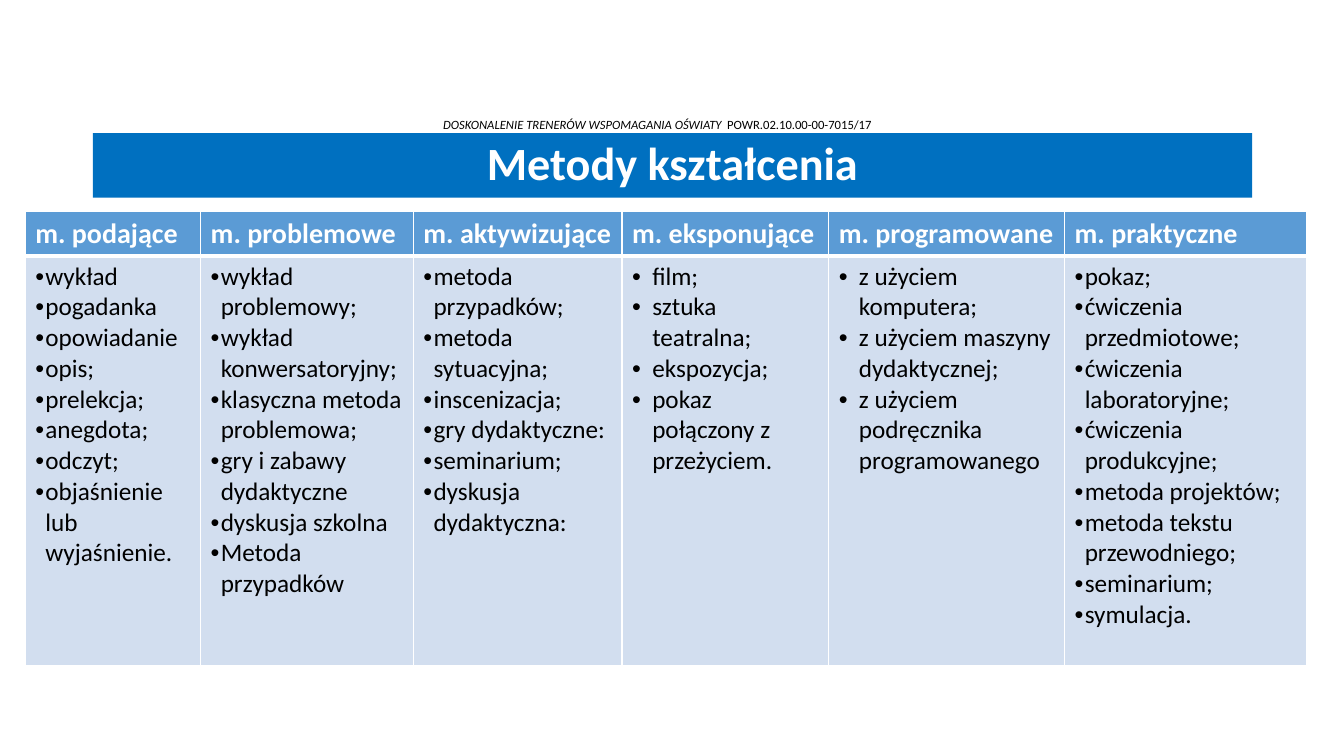
from lxml import etree
from pptx import Presentation
from pptx.dml.color import RGBColor
from pptx.enum import text as tx
from pptx.oxml.ns import qn
from pptx.util import Inches, Pt

# Content
TITLE = "Metody kształcenia"
PROJECT = [("DOSKONALENIE TRENERÓW WSPOMAGANIA OŚWIATY  ", True),
           ("POWR.02.10.00-00-7015/17", False)]
# Heading, column width, bullet indent, methods
METHODS = [
    ("m. podające", 1.74, 0.1,
     ["wykład", "pogadanka", "opowiadanie", "opis;", "prelekcja;",
      "anegdota;", "odczyt;", "objaśnienie lub wyjaśnienie."]),
    ("m. problemowe", 2.11, 0.1,
     ["wykład problemowy;", "wykład konwersatoryjny;",
      "klasyczna metoda problemowa;", "gry i zabawy dydaktyczne",
      "dyskusja szkolna", "Metoda przypadków"]),
    ("m. aktywizujące", 2.07, 0.1,
     ["metoda przypadków;", "metoda sytuacyjna;", "inscenizacja;",
      "gry dydaktyczne:", "seminarium;", "dyskusja dydaktyczna:"]),
    ("m. eksponujące", 2.05, 0.2,
     ["film;", "sztuka teatralna;", "ekspozycja;",
      "pokaz połączony z przeżyciem."]),
    ("m. programowane", 2.34, 0.2,
     ["z użyciem komputera;", "z użyciem maszyny dydaktycznej;",
      "z użyciem podręcznika programowanego"]),
    ("m. praktyczne", 2.4, 0.1,
     ["pokaz;", "ćwiczenia przedmiotowe;", "ćwiczenia laboratoryjne;",
      "ćwiczenia produkcyjne;", "metoda projektów;",
      "metoda tekstu przewodniego;", "seminarium;", "symulacja."]),
]
ROWS = [0.44, 4.06]
COLORS = {"band": "0070C0", "head": "5B9BD5", "body": "D2DEEF",
          "white": "FFFFFF", "black": "000000"}


def color(name):
    return RGBColor.from_string(COLORS[name])


def add_run(para, words, size, ink, bold=False, italic=False):
    run = para.add_run()
    run.text = words
    font = run.font
    font.name, font.size = "Calibri", Pt(size)
    font.bold, font.italic = bold, italic
    font.color.rgb = color(ink)


def add_bullet(para, indent):
    props = para._p.get_or_add_pPr()
    props.set("marL", str(Inches(indent)))
    props.set("indent", str(-Inches(indent)))
    etree.SubElement(props, qn("a:buFont"), typeface="Arial")
    etree.SubElement(props, qn("a:buChar"), char="•")


def style_cell(cell, fill, bottom):
    props = cell._tc.get_or_add_tcPr()
    for side in "LRTB":
        width = bottom if side == "B" else 1
        line = etree.SubElement(props, qn("a:ln" + side), w=str(Pt(width)))
        solid = etree.SubElement(line, qn("a:solidFill"))
        etree.SubElement(solid, qn("a:srgbClr"), val=COLORS["white"])
    cell.fill.solid()
    cell.fill.fore_color.rgb = color(fill)


def main():
    deck = Presentation()
    deck.slide_width, deck.slide_height = Inches(13.33), Inches(7.5)
    slide = deck.slides.add_slide(deck.slide_layouts[5])

    # Project line
    box = slide.shapes.add_textbox(
        Inches(0.79), Inches(1.12), Inches(11.46), Inches(0.24))
    frame = box.text_frame
    frame.word_wrap = True
    frame.margin_top = frame.margin_bottom = 0
    frame.vertical_anchor = tx.MSO_ANCHOR.MIDDLE
    para = frame.paragraphs[0]
    para.alignment, para.line_spacing = tx.PP_ALIGN.CENTER, 0.9
    for words, italic in PROJECT:
        add_run(para, words, 9, "black", italic=italic)

    # Title band
    title = slide.shapes.title
    title.left, title.top = Inches(0.92), Inches(1.32)
    title.width, title.height = Inches(11.5), Inches(0.64)
    title.fill.solid()
    title.fill.fore_color.rgb = color("band")
    frame = title.text_frame
    frame.auto_size = tx.MSO_AUTO_SIZE.NONE
    frame.vertical_anchor = tx.MSO_ANCHOR.MIDDLE
    para = frame.paragraphs[0]
    para.alignment, para.line_spacing = tx.PP_ALIGN.CENTER, 0.9
    add_run(para, TITLE, 33, "white", bold=True)

    # Table of methods
    total = sum(width for _, width, _, _ in METHODS)
    table = slide.shapes.add_table(
        len(ROWS), len(METHODS), Inches(0.25), Inches(2.1),
        Inches(total), Inches(sum(ROWS))).table
    for row, height in zip(table.rows, ROWS):
        row.height = Inches(height)
    for col, (name, width, indent, items) in enumerate(METHODS):
        table.columns[col].width = Inches(width)
        head, body = table.cell(0, col), table.cell(1, col)
        style_cell(head, "head", 3)
        style_cell(body, "body", 1)
        add_run(head.text_frame.paragraphs[0], name, 20, "white", bold=True)
        frame = body.text_frame
        for num, item in enumerate(items):
            para = frame.add_paragraph() if num else frame.paragraphs[0]
            add_bullet(para, indent)
            add_run(para, item, 18, "black")

    deck.save("out.pptx")


if __name__ == "__main__":
    main()
